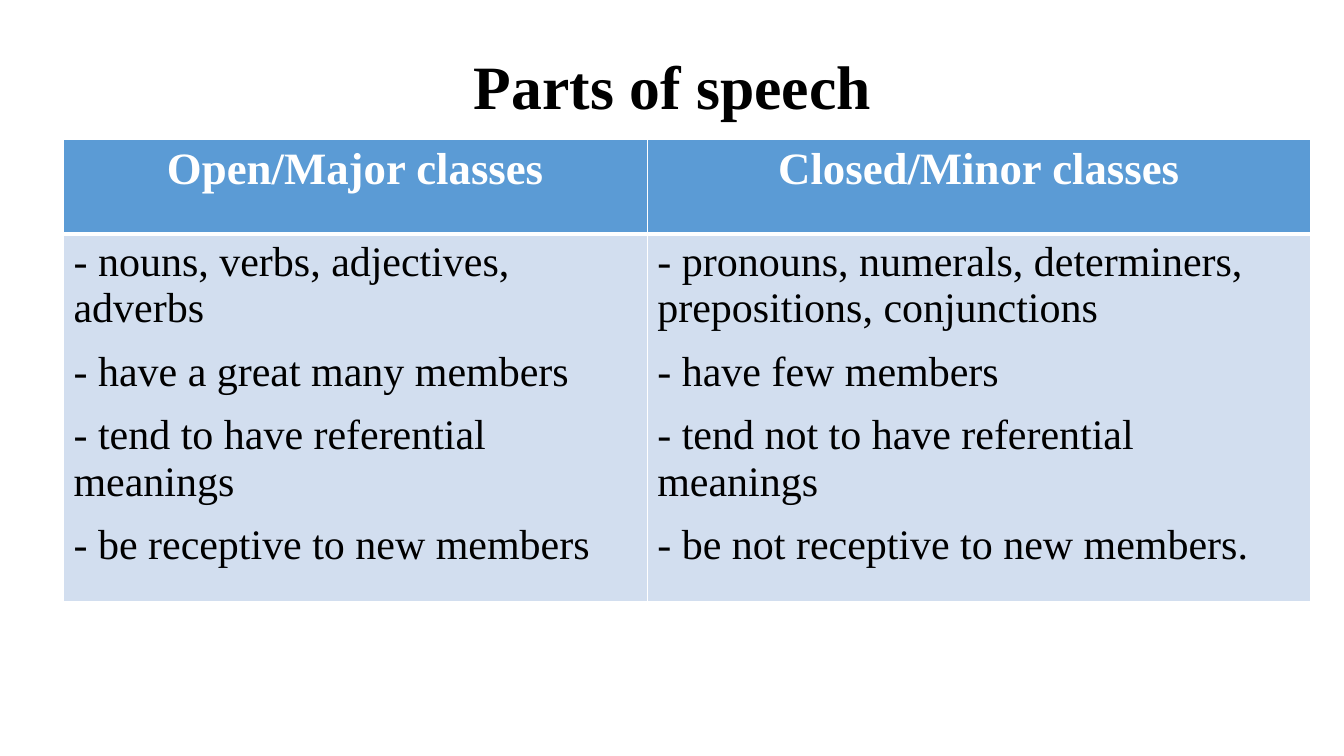
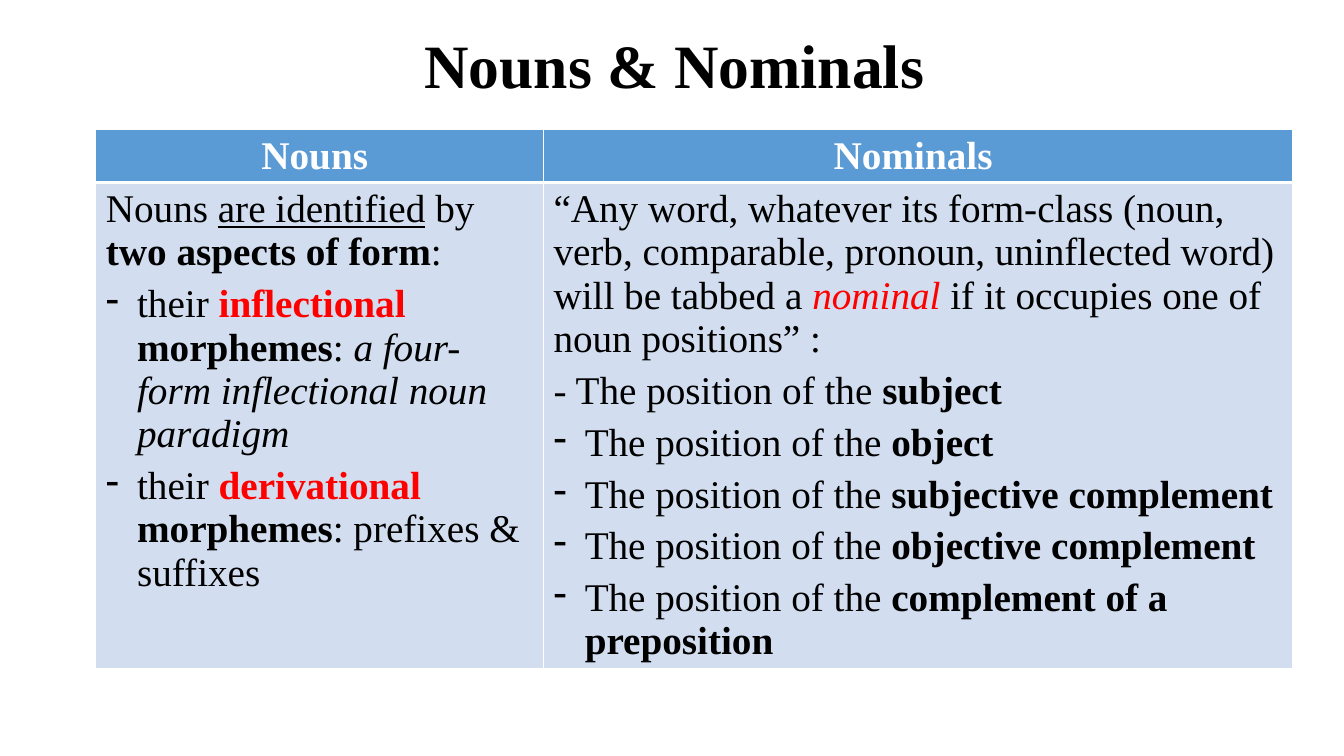
import dataclasses
import typing

import lxml.etree
import pptx
import pptx.dml.color
import pptx.enum.text
import pptx.oxml.ns
import pptx.presentation
import pptx.slide
import pptx.table
import pptx.text.text
import pptx.util

EMU_PER_PX = 9144  # 100 px to the inch
SLIDE_WIDTH, SLIDE_HEIGHT = 1333, 750
FONT = "Times New Roman"
TITLE_SIZE = 44
BULLET_INDENT = 31
COLORS = {
    "text": "000000",
    "header_text": "FFFFFF",
    "accent": "FF0000",
    "header_fill": "5B9BD5",
    "body_fill": "D2DEEF",
    "border": "FFFFFF",
}


@dataclasses.dataclass(frozen=True)
class Span:
    text: str
    color: str = "text"
    bold: bool = False
    italic: bool = False
    underline: bool = False


@dataclasses.dataclass(frozen=True)
class Line:
    spans: tuple[Span, ...]
    bullet: bool = False


@dataclasses.dataclass(frozen=True)
class Box:
    left: int
    top: int
    width: int
    height: int


@dataclasses.dataclass(frozen=True)
class Column:
    heading: str
    width: int
    lines: tuple[Line, ...]


@dataclasses.dataclass(frozen=True)
class CellStyle:
    fill: str
    size: int
    space_before: int
    space_after: int
    top_border: int
    bottom_border: int
    centered: bool = False


@dataclasses.dataclass(frozen=True)
class TableSlide:
    title: str
    title_box: Box
    table_left: int
    table_top: int
    row_heights: tuple[int, int]
    header_style: CellStyle
    body_style: CellStyle
    columns: tuple[Column, ...]


def plain_lines(*texts: str) -> tuple[Line, ...]:
    return tuple(Line((Span(text),)) for text in texts)


def position_line(role: str) -> Line:
    return Line((Span("The position of the "), Span(role, bold=True)), bullet=True)


def morpheme_line(kind: str, *details: Span) -> Line:
    return Line(
        (
            Span("their "),
            Span(kind, color="accent", bold=True),
            Span(" morphemes", bold=True),
            *details,
        ),
        bullet=True,
    )


SLIDES = (
    TableSlide(
        title="Parts of speech",
        title_box=Box(92, 40, 1150, 98),
        table_left=63,
        table_top=138,
        row_heights=(94, 365),
        header_style=CellStyle("header_fill", 32, 6, 6, 1, 3, centered=True),
        body_style=CellStyle("body_fill", 30, 6, 6, 3, 1),
        columns=(
            Column("Open/Major classes", 579, plain_lines(
                "- nouns, verbs, adjectives, adverbs",
                "- have a great many members",
                "- tend to have referential meanings",
                "- be receptive to new members",
            )),
            Column("Closed/Minor classes", 658, plain_lines(
                "- pronouns, numerals, determiners, prepositions, conjunctions",
                "- have few members",
                "- tend not to have referential meanings",
                "- be not receptive to new members.",
            )),
        ),
    ),
    TableSlide(
        title="Nouns & Nominals",
        title_box=Box(94, 24, 1150, 88),
        table_left=95,
        table_top=128,
        row_heights=(53, 481),
        header_style=CellStyle("header_fill", 28, 0, 0, 1, 3, centered=True),
        body_style=CellStyle("body_fill", 28, 0, 6, 3, 1),
        columns=(
            Column("Nouns ", 444, (
                Line((
                    Span("Nouns "),
                    Span("are identified", underline=True),
                    Span(" by "),
                    Span("two aspects of form", bold=True),
                    Span(":"),
                )),
                morpheme_line(
                    "inflectional",
                    Span(": "),
                    Span("a four-form inflectional noun paradigm", italic=True),
                ),
                morpheme_line("derivational", Span(": prefixes & suffixes")),
            )),
            Column("Nominals ", 743, (
                Line((
                    Span("“Any word, whatever its form-class (noun, verb, comparable, "
                         "pronoun, uninflected word) will be tabbed a "),
                    Span("nominal", color="accent", italic=True),
                    Span(" if it occupies one of noun positions” :"),
                )),
                Line((Span("- The position of the "), Span("subject", bold=True))),
                position_line("object"),
                position_line("subjective complement"),
                position_line("objective complement"),
                position_line("complement of a preposition"),
            )),
        ),
    ),
)


def px(length: int) -> pptx.util.Emu:
    return pptx.util.Emu(length * EMU_PER_PX)


def rgb(name: str) -> pptx.dml.color.RGBColor:
    return pptx.dml.color.RGBColor.from_string(COLORS[name])


def add_child(parent: typing.Any, tag: str, **attributes: str) -> typing.Any:
    return lxml.etree.SubElement(parent, pptx.oxml.ns.qn(tag), attributes)


def add_span(paragraph: pptx.text.text._Paragraph, span: Span, size: int) -> None:
    run = paragraph.add_run()
    run.text = span.text
    font = run.font
    font.name = FONT
    font.size = pptx.util.Pt(size)
    font.bold = span.bold
    font.italic = span.italic
    font.underline = span.underline
    font.color.rgb = rgb(span.color)


def add_bullet(paragraph: pptx.text.text._Paragraph) -> None:
    """Give the paragraph a dash with a hanging indent."""
    properties = paragraph._p.get_or_add_pPr()
    properties.set("marL", str(px(BULLET_INDENT)))
    properties.set("indent", str(-px(BULLET_INDENT)))
    add_child(properties, "a:buChar", char="-")


def set_borders(cell: pptx.table._Cell, style: CellStyle) -> None:
    """Add the four cell edges; the fill has to be set after them."""
    properties = cell._tc.get_or_add_tcPr()
    widths = {"L": 1, "R": 1, "T": style.top_border, "B": style.bottom_border}
    for side, width in widths.items():
        edge = add_child(properties, f"a:ln{side}", w=str(pptx.util.Pt(width)))
        fill = add_child(edge, "a:solidFill")
        add_child(fill, "a:srgbClr", val=COLORS["border"])


def fill_cell(cell: pptx.table._Cell, lines: tuple[Line, ...], style: CellStyle) -> None:
    set_borders(cell, style)
    cell.fill.solid()
    cell.fill.fore_color.rgb = rgb(style.fill)
    text_frame = cell.text_frame
    for index, line in enumerate(lines):
        paragraph = text_frame.add_paragraph() if index else text_frame.paragraphs[0]
        paragraph.space_before = pptx.util.Pt(style.space_before)
        paragraph.space_after = pptx.util.Pt(style.space_after)
        if style.centered:
            paragraph.alignment = pptx.enum.text.PP_ALIGN.CENTER
        if line.bullet:
            add_bullet(paragraph)
        for span in line.spans:
            add_span(paragraph, span, style.size)


def set_title(slide: pptx.slide.Slide, text: str, box: Box) -> None:
    title = slide.shapes.title
    title.left, title.top = px(box.left), px(box.top)
    title.width, title.height = px(box.width), px(box.height)
    text_frame = title.text_frame
    text_frame.auto_size = pptx.enum.text.MSO_AUTO_SIZE.NONE
    text_frame.vertical_anchor = pptx.enum.text.MSO_ANCHOR.MIDDLE
    paragraph = text_frame.paragraphs[0]
    paragraph.alignment = pptx.enum.text.PP_ALIGN.CENTER
    paragraph.line_spacing = 0.9
    add_span(paragraph, Span(text, bold=True), TITLE_SIZE)


def add_comparison(slide: pptx.slide.Slide, content: TableSlide) -> None:
    table = slide.shapes.add_table(
        len(content.row_heights),
        len(content.columns),
        px(content.table_left),
        px(content.table_top),
        px(sum(column.width for column in content.columns)),
        px(sum(content.row_heights)),
    ).table
    table.horz_banding = False
    for row, height in zip(table.rows, content.row_heights):
        row.height = px(height)
    for index, column in enumerate(content.columns):
        table.columns[index].width = px(column.width)
        heading = Line((Span(column.heading, color="header_text", bold=True),))
        fill_cell(table.cell(0, index), (heading,), content.header_style)
        fill_cell(table.cell(1, index), column.lines, content.body_style)


def add_table_slide(
    presentation: pptx.presentation.Presentation, content: TableSlide
) -> None:
    layout = presentation.slide_layouts.get_by_name("Title Only")
    slide = presentation.slides.add_slide(layout)
    set_title(slide, content.title, content.title_box)
    add_comparison(slide, content)


def main() -> None:
    presentation = pptx.Presentation()
    presentation.slide_width = px(SLIDE_WIDTH)
    presentation.slide_height = px(SLIDE_HEIGHT)
    for content in SLIDES:
        add_table_slide(presentation, content)
    presentation.save("out.pptx")


if __name__ == "__main__":
    main()
